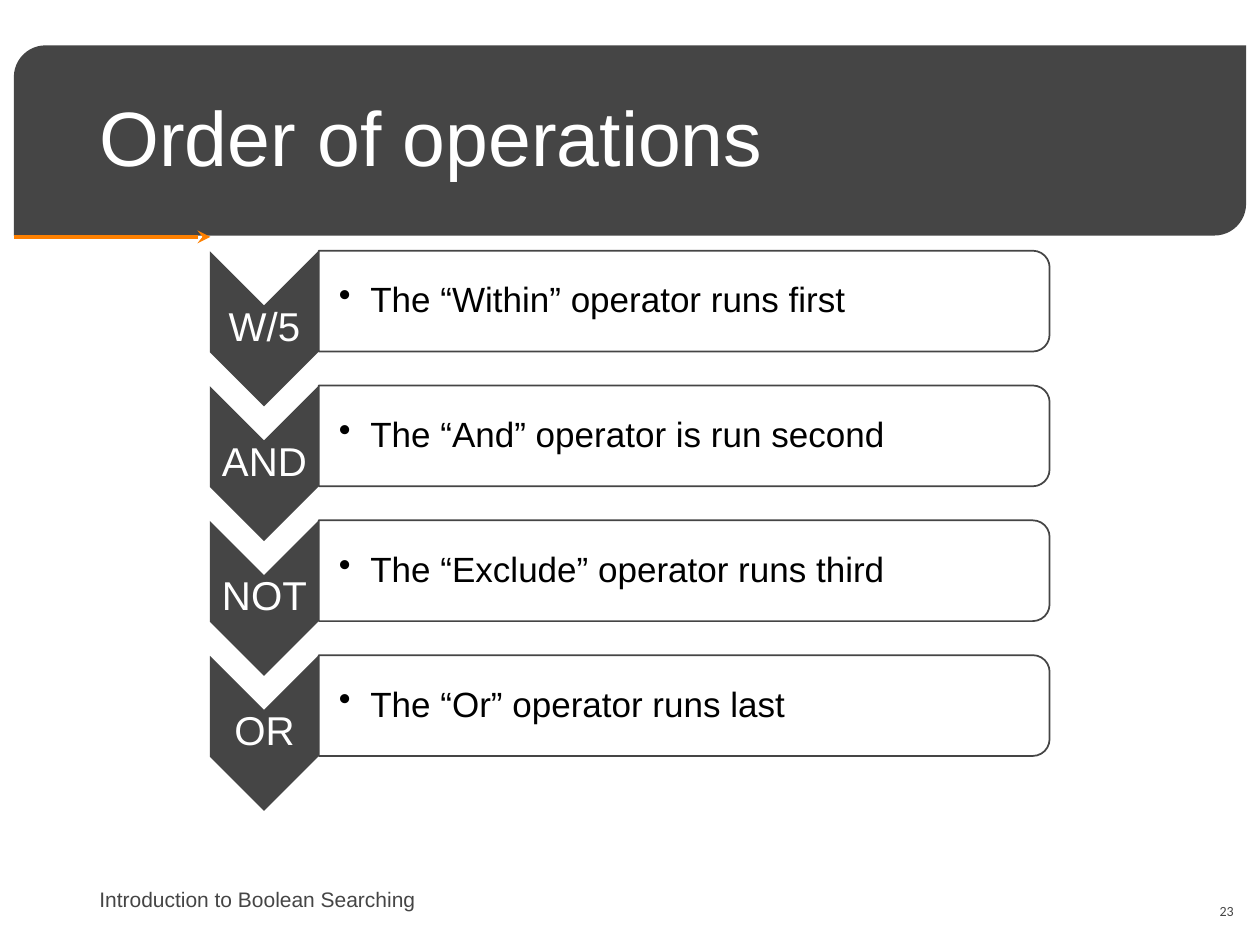
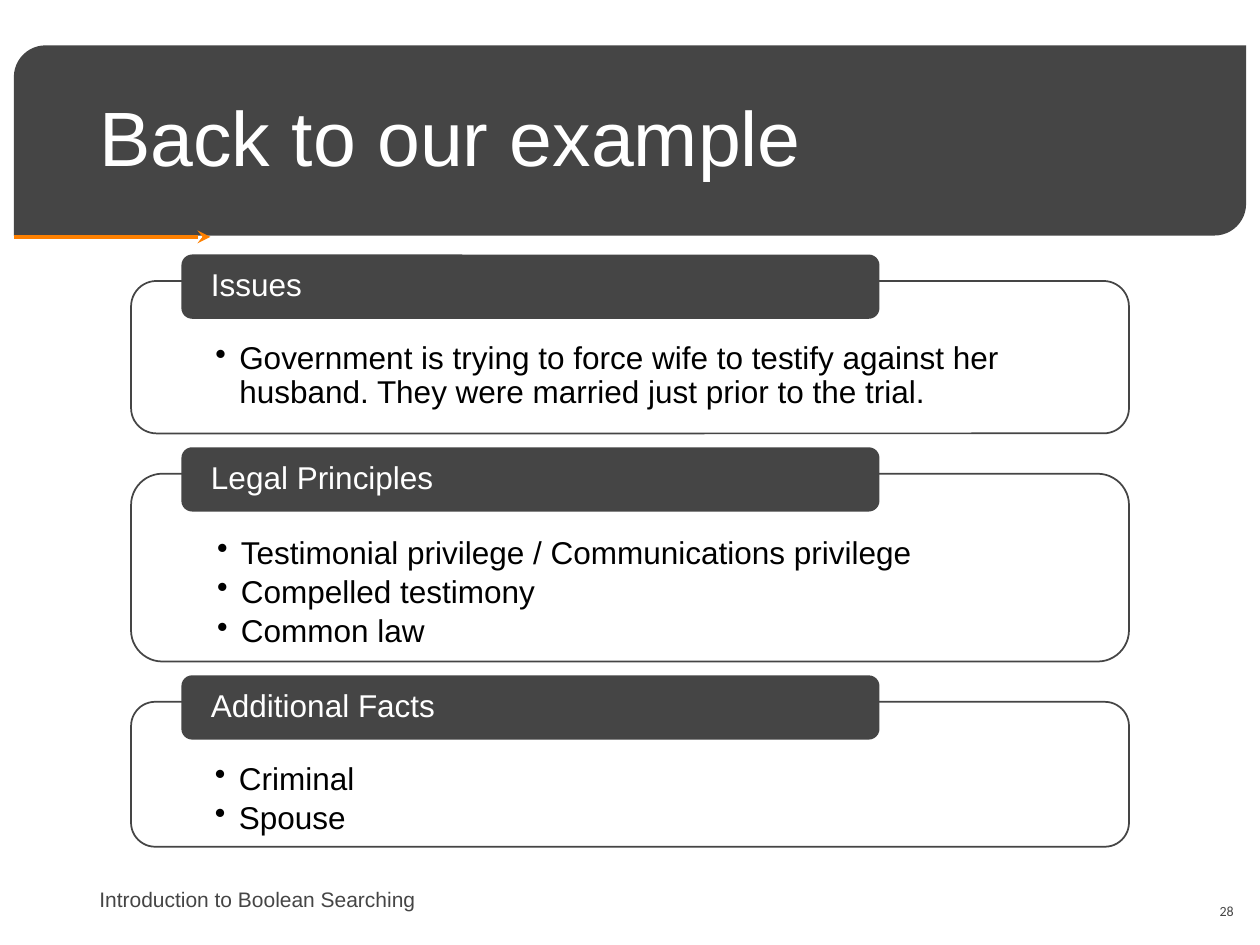
from pptx import Presentation
from pptx.dml.color import RGBColor
from pptx.enum.shapes import MSO_CONNECTOR, MSO_SHAPE
from pptx.enum.text import MSO_ANCHOR, PP_ALIGN
from pptx.oxml.ns import qn
from pptx.util import Inches, Pt
from lxml import etree

GREY = "454545"
ORANGE = "FE8000"
WHITE = "FFFFFF"
BLACK = "000000"
color = RGBColor.from_string


def add_shape(slide, kind, left, top, width, height, fill=GREY, outline=None):
    shape = slide.shapes.add_shape(kind, Inches(left), Inches(top), Inches(width), Inches(height))
    shape.shadow.inherit = False
    shape.fill.solid()
    shape.fill.fore_color.rgb = color(fill)
    if outline:
        shape.line.color.rgb = color(outline)
        shape.line.width = Pt(1)
    else:
        shape.line.fill.background()
    return shape


def write(shape, lines, size, text_color, insets=(0.1, 0.05, 0.1, 0.05), font="Arial",
          align=PP_ALIGN.LEFT, anchor=MSO_ANCHOR.MIDDLE, bullet_indent=None):
    """Fill a shape with one paragraph per line; insets run left, top, right, bottom."""
    frame = shape.text_frame
    frame.text = "\n".join(lines)
    frame.word_wrap = True
    frame.vertical_anchor = anchor
    (frame.margin_left, frame.margin_top,
     frame.margin_right, frame.margin_bottom) = [Inches(inset) for inset in insets]
    for paragraph in frame.paragraphs:
        paragraph.alignment = align
        paragraph.line_spacing = 0.9
        if bullet_indent:
            paragraph.space_after = Pt(3)
            properties = paragraph._p.get_or_add_pPr()
            properties.set("marL", str(Inches(bullet_indent)))
            properties.set("indent", str(-Inches(bullet_indent)))
            etree.SubElement(properties, qn("a:buChar")).set("char", "•")
        for run in paragraph.runs:
            run.font.name = font
            run.font.size = Pt(size)
            run.font.color.rgb = color(text_color)


presentation = Presentation()
presentation.slide_width = Inches(10)
presentation.slide_height = Inches(7.5)

# Title band, arrow and footer shared by both slides
slides = []
for title, number in [("Order of operations", "23"), ("Back to our example", "28")]:
    slide = presentation.slides.add_slide(presentation.slide_layouts[6])
    slides.append(slide)
    add_shape(slide, MSO_SHAPE.ROUND_2_DIAG_RECTANGLE, 0.11, 0.36, 9.78, 1.51)

    arrow = slide.shapes.add_connector(
        MSO_CONNECTOR.STRAIGHT, Inches(0.11), Inches(1.88), Inches(1.67), Inches(1.88))
    arrow.line.color.rgb = color(ORANGE)
    arrow.line.width = Pt(2.5)
    arrow_properties = arrow._element.spPr
    etree.SubElement(arrow_properties.find(qn("a:ln")), qn("a:tailEnd")).set("type", "stealth")
    etree.SubElement(arrow_properties, qn("a:effectLst"))

    title_box = slide.shapes.add_textbox(Inches(0.69), Inches(0.4), Inches(8.62), Inches(1.45))
    write(title_box, [title], 44, WHITE)
    number_box = slide.shapes.add_textbox(Inches(7.64), Inches(7.04), Inches(2.25), Inches(0.4))
    write(number_box, [number], 8, GREY, font="Calibri", align=PP_ALIGN.RIGHT)
    footer_box = slide.shapes.add_textbox(Inches(0.69), Inches(6.95), Inches(3.31), Inches(0.4))
    write(footer_box, ["Introduction to Boolean Searching"], 12, GREY)

order_slide, example_slide = slides

# Operators in the order they run
operators = [
    ("W/5", "The “Within” operator runs first"),
    ("AND", "The “And” operator is run second"),
    ("NOT", "The “Exclude” operator runs third"),
    ("OR", "The “Or” operator runs last"),
]
for row, (operator, explanation) in enumerate(operators):
    row_top = 1.99 + row * 1.07
    chevron = add_shape(order_slide, MSO_SHAPE.CHEVRON, 1.48, row_top + 0.19, 1.23, 0.86)
    chevron.rotation = 90
    operator_box = order_slide.shapes.add_textbox(
        Inches(1.67), Inches(row_top + 0.43), Inches(0.86), Inches(0.37))
    write(operator_box, [operator], 23, WHITE, insets=[0.02] * 4, align=PP_ALIGN.CENTER)

    # A quarter turn puts the rounded corners on the right
    bar = add_shape(order_slide, MSO_SHAPE.ROUND_2_SAME_RECTANGLE,
                    5.03, row_top - 2.5, 0.8, 5.8, WHITE, GREY)
    bar.rotation = 90
    explanation_box = order_slide.shapes.add_textbox(
        Inches(2.53), Inches(row_top + 0.04), Inches(5.76), Inches(0.72))
    write(explanation_box, [explanation], 20, BLACK,
          insets=(0.16, 0.01, 0.01, 0.01), bullet_indent=0.25)

# Cards with an overlapping heading
cards = [
    ("Issues", 1.21, ["Government is trying to force wife to testify against her husband. "
                      "They were married just prior to the trial."]),
    ("Legal Principles", 1.49, ["Testimonial privilege / Communications privilege",
                                "Compelled testimony", "Common law"]),
    ("Additional Facts", 1.15, ["Criminal", "Spouse"]),
]
card_top = 2.23
for heading, card_height, points in cards:
    card = add_shape(example_slide, MSO_SHAPE.ROUNDED_RECTANGLE,
                     1.04, card_top, 7.92, card_height, WHITE, GREY)
    write(card, points, 18, BLACK, insets=(0.61, 0.43, 0.61, 0.14),
          anchor=MSO_ANCHOR.TOP, bullet_indent=0.19)
    heading_tab = add_shape(example_slide, MSO_SHAPE.ROUNDED_RECTANGLE,
                            1.44, card_top - 0.21, 5.54, 0.51)
    write(heading_tab, [heading], 18, WHITE, insets=(0.21, 0, 0.21, 0))
    card_top += card_height + 0.32

presentation.save("out.pptx")
